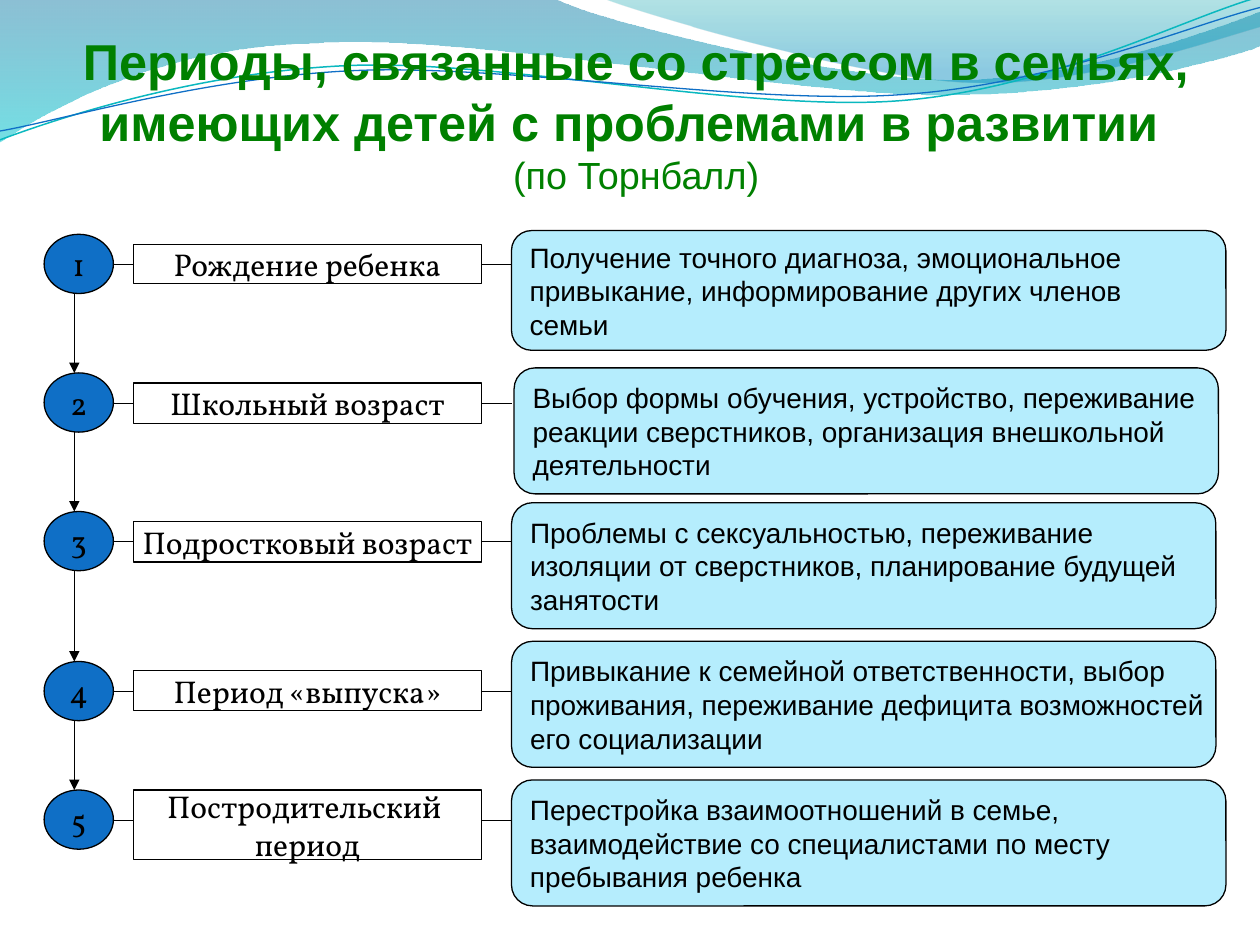
from itertools import pairwise
from math import cos, radians, sin

from lxml import etree
from pptx import Presentation
from pptx.dml.color import RGBColor
from pptx.enum import shapes, text
from pptx.oxml.ns import qn
from pptx.util import Inches, Pt

BLACK, WHITE, GREEN = "000000", "FFFFFF", "008000"
BLUE, PALE_BLUE = "0F6FC6", "B5EDFD"
LEFT, CENTER = text.PP_ALIGN.LEFT, text.PP_ALIGN.CENTER
CIRCLE_LEFT, CIRCLE_WIDTH, CIRCLE_HEIGHT = 0.35, 0.55, 0.47
LABEL_LEFT, LABEL_WIDTH = 1.06, 2.76
DETAIL_LEFT, ARROW_X = 4.06, 0.59
TILT = 2.7


def color(value):
    return RGBColor.from_string(value)


def turn(point, center, degrees):
    """Turn a point clockwise around a center."""
    angle = radians(degrees)
    x, y = point[0] - center[0], point[1] - center[1]
    return (center[0] + x * cos(angle) - y * sin(angle),
            center[1] + x * sin(angle) + y * cos(angle))


deck = Presentation()
deck.slide_width, deck.slide_height = Inches(10), Inches(7.5)
page = deck.slides.add_slide(deck.slide_layouts[6])

# Waves along the top: a step is a straight end point or a Bezier triple.
# Filled waves have gradient stops (position, colour, alpha %), lines are tilted.
waves = [
    {"steps": [(0, 0), (4.4, -0.01), (4.76, 0.17, 6.64, 0.63, 7.58, 0.63),
               (8.53, 0.63, 9.58, 0.26, 10, 0.09), (10.01, 0.36),
               (9.83, 0.44, 8.7, 0.76, 7.46, 0.75), (6.22, 0.75, 3.82, 0.28, 2.57, 0.34),
               (1.29, 0.36, 0.46, 0.83, -0.01, 1.13), (0, 0)],
     "stops": [(0, "0074A1", 45), (1, "00C6CF", 55)]},
    {"steps": [(4.79, -0.01), (5.09, 0.11, 6.82, 0.62, 7.69, 0.65),
               (8.56, 0.69, 9.61, 0.32, 10, 0.21), (10, 0), (4.79, -0.01)],
     "stops": [(0, "00A1A9", 30), (0.8, "008BBF", 45)]},
    {"steps": [(0, 1.11), (0.48, 0.93, 1.58, 0.57, 2.77, 0.52),
               (3.95, 0.47, 5.93, 0.89, 7.13, 0.8), (8.33, 0.71, 9.38, 0.15, 9.98, -0.02)],
     "line": ("0AB8BF", 0.85), "center": (4.99, 0.58)},
    {"steps": [(0, 1.04), (0.47, 0.96, 1.64, 0.61, 2.83, 0.56),
               (4.03, 0.51, 5.97, 0.84, 7.17, 0.75), (8.36, 0.67, 9.41, 0.21, 10, 0.06)],
     "line": (BLUE, 0.75), "center": (5, 0.59)},
]
for wave in waves:
    points = [step[i:i + 2] for step in wave["steps"] for i in range(0, len(step), 2)]
    if "center" in wave:
        points = [turn(point, wave["center"], TILT) for point in points]
    points = [(Inches(x), Inches(y)) for x, y in points]
    builder = page.shapes.build_freeform(*points[0])
    builder.add_line_segments(points[1:], close="stops" in wave)
    shape = builder.convert_to_shape()
    shape.shadow.inherit = False

    # Merge each Bezier triple of line segments into one curve
    segments = iter(list(shape._element.iter(qn("a:lnTo"))))
    for step in wave["steps"][1:]:
        segment = next(segments)
        if len(step) == 6:
            curve = etree.Element(qn("a:cubicBezTo"))
            segment.addprevious(curve)
            for part in (segment, next(segments), next(segments)):
                curve.append(part[0])
                part.getparent().remove(part)

    if "line" in wave:
        shape.rotation = 360 - TILT
        shape.fill.background()
        shape.line.color.rgb = color(wave["line"][0])
        shape.line.width = Pt(wave["line"][1])
        continue
    shape.line.fill.background()
    shape.fill.gradient()
    shape.fill.gradient_angle = 270
    for stop, (position, value, _) in zip(shape.fill.gradient_stops, wave["stops"]):
        stop.position = position
        stop.color.rgb = color(value)
    for element, (_, _, alpha) in zip(shape._element.spPr.iter(qn("a:srgbClr")), wave["stops"]):
        etree.SubElement(element, qn("a:alpha"), val=str(alpha * 1000))

# Title
title = page.shapes.add_textbox(Inches(0.55), Inches(0.31), Inches(9), Inches(1.25))
frame_format = {"word_wrap": True, "vertical_anchor": text.MSO_ANCHOR.BOTTOM,
                "margin_left": 0, "margin_right": 0, "margin_bottom": 0}
for name, value in frame_format.items():
    setattr(title.text_frame, name, value)
para = title.text_frame.paragraphs[0]
para.alignment = CENTER
heading = "Периоды, связанные со стрессом в семьях, имеющих детей с проблемами в развитии "
for words, size, bold in [(heading, 28.8, True), ("(по Торнбалл)", 21.6, False)]:
    if not bold:
        para.add_line_break()
    span = para.add_run()
    span.text = words
    for name, value in {"name": "Arial", "size": Pt(size), "bold": bold}.items():
        setattr(span.font, name, value)
    span.font.color.rgb = color(GREEN)

# Circle top, label place (top, height), label, detail place, detail lines
periods = [
    (1.86, (1.94, 0.31), ["Рождение ребенка"], (DETAIL_LEFT, 1.83, 5.67, 0.95),
     ["Получение точного диагноза, эмоциональное",
      "привыкание, информирование других членов", "семьи"]),
    (2.96, (3.04, 0.32), ["Школьный возраст"], (4.08, 2.92, 5.59, 1),
     ["Выбор формы обучения, устройство, переживание",
      "реакции сверстников, организация внешкольной", "деятельности"]),
    (4.06, (4.14, 0.32), ["Подростковый возраст"], (DETAIL_LEFT, 3.99, 5.59, 1),
     ["Проблемы с сексуальностью, переживание",
      "изоляции от сверстников, планирование будущей", "занятости"]),
    (5.25, (5.32, 0.32), ["Период «выпуска»"], (DETAIL_LEFT, 5.09, 5.59, 1),
     ["Привыкание к семейной ответственности, выбор",
      "проживания, переживание дефицита возможностей", "его социализации"]),
    (6.27, (6.27, 0.55), ["Постродительский ", "период"], (DETAIL_LEFT, 6.19, 5.67, 1),
     ["Перестройка взаимоотношений в семье,",
      "взаимодействие со специалистами по месту", "пребывания ребенка"]),
]
kinds = shapes.MSO_SHAPE
boxes, lines = [], []
for number, (top, (label_top, label_height), label, detail_place, detail) in enumerate(periods, 1):
    boxes += [
        (kinds.OVAL, (CIRCLE_LEFT, top, CIRCLE_WIDTH, CIRCLE_HEIGHT), BLUE,
         [str(number)], "Vollkorn", 18, CENTER),
        (kinds.RECTANGLE, (LABEL_LEFT, label_top, LABEL_WIDTH, label_height), WHITE,
         label, "Vollkorn", 18, CENTER),
        (kinds.ROUNDED_RECTANGLE, detail_place, PALE_BLUE, detail, "Arial", 16, LEFT),
    ]
    middle = top + 0.24
    lines += [(CIRCLE_LEFT + CIRCLE_WIDTH, middle, LABEL_LEFT, middle, False),
              (LABEL_LEFT + LABEL_WIDTH, middle, DETAIL_LEFT, middle, False)]
for upper, lower in pairwise(periods):
    lines.append((ARROW_X, upper[0] + CIRCLE_HEIGHT, ARROW_X, lower[0], True))

for kind, place, fill, content, font, size, alignment in boxes:
    box = page.shapes.add_shape(kind, *map(Inches, place))
    box.shadow.inherit = False
    box.fill.solid()
    box.fill.fore_color.rgb = color(fill)
    box.line.color.rgb = color(BLACK)
    box.line.width = Pt(0.75)
    box.text_frame.word_wrap = False
    box.text_frame.vertical_anchor = text.MSO_ANCHOR.MIDDLE
    box.text_frame.text = "\n".join(content)
    for para in box.text_frame.paragraphs:
        para.alignment = alignment
        span = para.runs[0]
        span.font.name, span.font.size = font, Pt(size)
        span.font.color.rgb = color(BLACK)

for x1, y1, x2, y2, has_arrow in lines:
    line = page.shapes.add_connector(shapes.MSO_CONNECTOR.STRAIGHT,
                                     *map(Inches, (x1, y1, x2, y2)))
    line.line.color.rgb = color(BLACK)
    line.line.width = Pt(0.75)
    properties = line._element.spPr
    if has_arrow:
        etree.SubElement(properties.find(qn("a:ln")), qn("a:tailEnd"), type="triangle")
    etree.SubElement(properties, qn("a:effectLst"))

deck.save("out.pptx")
